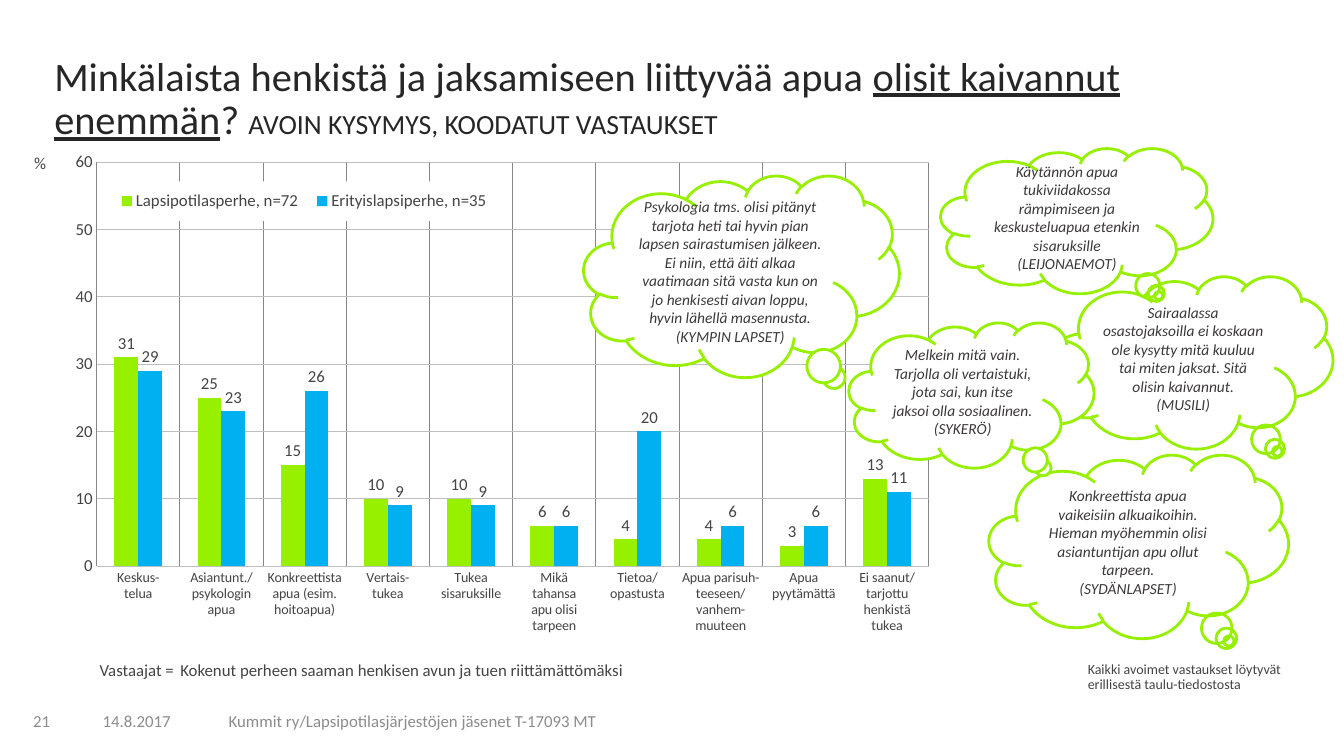
from lxml.etree import SubElement
from pptx import Presentation
from pptx.chart.data import CategoryChartData
from pptx.dml.color import RGBColor
from pptx.enum.chart import (XL_CHART_TYPE, XL_LABEL_POSITION,
                             XL_LEGEND_POSITION, XL_TICK_MARK)
from pptx.enum.shapes import MSO_SHAPE
from pptx.enum.text import MSO_ANCHOR, PP_ALIGN
from pptx.oxml import parse_xml
from pptx.oxml.ns import nsdecls, qn
from pptx.util import Inches, Pt

FONT = "Calibri"
GREEN = RGBColor(0x96, 0xF0, 0x00)
BLUE = RGBColor(0x00, 0xB0, 0xF0)
WHITE = RGBColor(0xFF, 0xFF, 0xFF)
TITLE_INK = RGBColor(0x26, 0x26, 0x26)
INK = RGBColor(0x44, 0x44, 0x44)
QUOTE_INK = RGBColor(0x3B, 0x38, 0x38)
FOOTER_INK = RGBColor(0x8C, 0x8C, 0x8C)
GRID = RGBColor(0xBC, 0xBE, 0xC0)
DIVIDER = RGBColor(0x86, 0x86, 0x86)

TITLE_BOX = (0.44, 0.51, 12.07, 0.68)
TITLE_RUNS = [
    ("Minkälaista henkistä ja jaksamiseen liittyvää apua ", {"size": Pt(28.8)}),
    ("olisit kaivannut enemmän", {"size": Pt(28.8), "underline": True}),
    ("? ", {"size": Pt(28.8)}),
    ("AVOIN KYSYMYS, KOODATUT VASTAUKSET", {"size": Pt(19.8)}),
]
FOOTERS = [
    ((0.23, 6.95, 0.44, 0.4), "21"),
    ((0.92, 6.95, 1.01, 0.4), "14.8.2017"),
    ((2.17, 6.95, 4.56, 0.4), "Kummit ry/Lapsipotilasjärjestöjen jäsenet T-17093 MT"),
]
NOTES = [
    ((0.89, 6.52, 1.82, 0.28), "Vastaajat =", 12),
    ((1.69, 6.52, 5.66, 0.28),
     "Kokenut perheen saaman henkisen avun ja tuen riittämättömäksi", 12),
    ((10.69, 6.52, 2.25, 0.41),
     "Kaikki avoimet vastaukset löytyvät erillisestä taulu-tiedostosta", 10),
]
CHART_BOX = (0.29, 1.46, 9.03, 5.23)
CATEGORIES = [
    "Keskus-\ntelua", "Asiantunt./\npsykologin apua",
    "Konkreettista apua (esim. hoitoapua)", "Vertais-\ntukea",
    "Tukea\nsisaruksille", "Mikä\ntahansa\napu olisi\ntarpeen",
    "Tietoa/\nopastusta", "Apua parisuh-\nteeseen/\nvanhem-\nmuuteen",
    "Apua\npyytämättä", "Ei saanut/\ntarjottu\nhenkistä tukea",
]
SERIES = [
    ("Lapsipotilasperhe, n=72", (31, 25, 15, 10, 10, 6, 4, 4, 3, 13), GREEN),
    ("Erityislapsiperhe, n=35", (29, 23, 26, 9, 9, 6, 20, 6, 6, 11), BLUE),
]
# box, fill, quote, source of the quote
CLOUDS = [
    ((9.81, 4.51, 2.97, 1.82), None,
     "Konkreettista apua vaikeisiin alkuaikoihin. Hieman myöhemmin olisi "
     "asiantuntijan apu ollut tarpeen.", "(SYDÄNLAPSET)"),
    ((10.45, 2.74, 2.77, 1.71), None,
     "Sairaalassa osastojaksoilla ei koskaan ole kysytty mitä kuuluu tai "
     "miten jaksat. Sitä olisin kaivannut.", "(MUSILI)"),
    ((9.33, 1.47, 2.7, 1.44), None,
     "Käytännön apua tukiviidakossa rämpimiseen ja keskusteluapua etenkin "
     "sisaruksille", "(LEIJONAEMOT)"),
    ((5.79, 1.74, 3.13, 2), WHITE,
     "Psykologia tms. olisi pitänyt tarjota heti tai hyvin pian lapsen "
     "sairastumisen jälkeen. Ei niin, että äiti alkaa vaatimaan sitä vasta kun "
     "on jo henkisesti aivan loppu, hyvin lähellä masennusta.", "(KYMPIN LAPSET)"),
    ((8.42, 3.2, 2.43, 1.44), WHITE,
     "Melkein mitä vain. Tarjolla oli vertaistuki, jota sai, kun itse jaksoi "
     "olla sosiaalinen.", "(SYKERÖ)"),
]


def inches(box):
    return [Inches(v) for v in box]


def style(font, color, **formats):
    font.color.rgb = color
    for name, value in {"name": FONT, **formats}.items():
        setattr(font, name, value)


def add_text(slide, box, runs, color, anchor=MSO_ANCHOR.TOP, spacing=0.9):
    tf = slide.shapes.add_textbox(*inches(box)).text_frame
    tf.word_wrap = True
    tf.vertical_anchor = anchor
    p = tf.paragraphs[0]
    p.line_spacing = spacing
    for text, formats in runs:
        r = p.add_run()
        r.text = text
        style(r.font, color, **formats)


def set_layout(parent, index, **values):
    """Place a chart part by fractions of the chart area."""
    for old in parent.findall(qn("c:layout")):
        parent.remove(old)
    layout = parent.makeelement(qn("c:layout"))
    manual = SubElement(layout, qn("c:manualLayout"))
    for tag, value in values.items():
        SubElement(manual, qn(f"c:{tag}")).set("val", str(value))
    parent.insert(index, layout)


def add_bar_chart(slide):
    data = CategoryChartData(number_format="General")
    data.categories = CATEGORIES
    for name, values, _ in SERIES:
        data.add_series(name, values)
    chart = slide.shapes.add_chart(
        XL_CHART_TYPE.COLUMN_CLUSTERED, *inches(CHART_BOX), data).chart
    chart.has_title = False
    style(chart.font, INK, size=Pt(12))
    plot = chart.plots[0]
    plot.gap_width, plot.overlap, plot.vary_by_categories = 150, 0, False
    for series, (_, _, color) in zip(plot.series, SERIES):
        series.format.fill.solid()
        series.format.fill.fore_color.rgb = color
        labels = series.data_labels
        labels.show_value = True
        labels.number_format, labels.number_format_is_linked = "#,##0", False
        labels.position = XL_LABEL_POSITION.OUTSIDE_END
        style(labels.font, INK, size=Pt(12))
    plot_area = chart._chartSpace.chart.plotArea
    set_layout(plot_area, 0, layoutTarget="inner", xMode="edge", yMode="edge",
               x=0.074, y=0.028, w=0.914, h=0.767)

    axes = [(chart.category_axis, 10, DIVIDER, 0.75), (chart.value_axis, 12, GRID, 0.5)]
    for axis, size, grid_color, grid_width in axes:
        axis.major_tick_mark = axis.minor_tick_mark = XL_TICK_MARK.NONE
        axis.format.line.fill.background()
        axis.has_major_gridlines = True
        axis.major_gridlines.format.line.color.rgb = grid_color
        axis.major_gridlines.format.line.width = Pt(grid_width)
        style(axis.tick_labels.font, INK, size=Pt(size))

    value_axis = chart.value_axis
    value_axis.minimum_scale, value_axis.maximum_scale, value_axis.major_unit = 0, 60, 10
    tf = value_axis.axis_title.text_frame
    tf.text = "%"
    style(tf.paragraphs[0].runs[0].font, INK, size=Pt(12), bold=False)
    title = value_axis.axis_title._element
    body = next(title.iter(qn("a:bodyPr")))
    body.set("rot", "0")
    body.set("vert", "horz")
    set_layout(title, 1, xMode="edge", yMode="edge", x=0.002, y=0.002)

    chart.has_legend = True
    legend = chart.legend
    legend.position = XL_LEGEND_POSITION.RIGHT
    legend.include_in_layout = False
    style(legend.font, INK, size=Pt(12))
    set_layout(legend._element, 1, xMode="edge", yMode="edge",
               x=0.087, y=0.065, w=0.43, h=0.075)
    legend._element.find(qn("c:overlay")).addnext(parse_xml(
        f'<c:spPr {nsdecls("c", "a")}><a:solidFill><a:srgbClr val="{WHITE}"/>'
        "</a:solidFill></c:spPr>"))


def add_cloud(slide, box, fill, quote, source):
    sp = slide.shapes.add_shape(MSO_SHAPE.CLOUD_CALLOUT, *inches(box))
    sp.shadow.inherit = False
    sp.adjustments[0], sp.adjustments[1] = 0.301, 0.516
    if fill is None:
        sp.fill.background()
    else:
        sp.fill.solid()
        sp.fill.fore_color.rgb = fill
    sp.line.color.rgb = GREEN
    sp.line.width = Pt(2)
    tf = sp.text_frame
    tf.word_wrap = True
    tf.vertical_anchor = MSO_ANCHOR.MIDDLE
    tf.text = f"{quote}\n{source}"
    for p in tf.paragraphs:
        p.alignment = PP_ALIGN.CENTER
        style(p.runs[0].font, QUOTE_INK, size=Pt(11), italic=True)


def main():
    prs = Presentation()
    prs.slide_width, prs.slide_height = Inches(13.33), Inches(7.5)
    s = prs.slides.add_slide(prs.slide_layouts[6])
    for box, text in FOOTERS:
        add_text(s, box, [(text, {"size": Pt(12)})], FOOTER_INK, MSO_ANCHOR.MIDDLE, 1.0)
    add_text(s, TITLE_BOX, TITLE_RUNS, TITLE_INK)
    add_bar_chart(s)
    for box, text, size in NOTES:
        add_text(s, box, [(text, {"size": Pt(size)})], INK)
    for cloud in CLOUDS:
        add_cloud(s, *cloud)
    prs.save("out.pptx")


if __name__ == "__main__":
    main()
